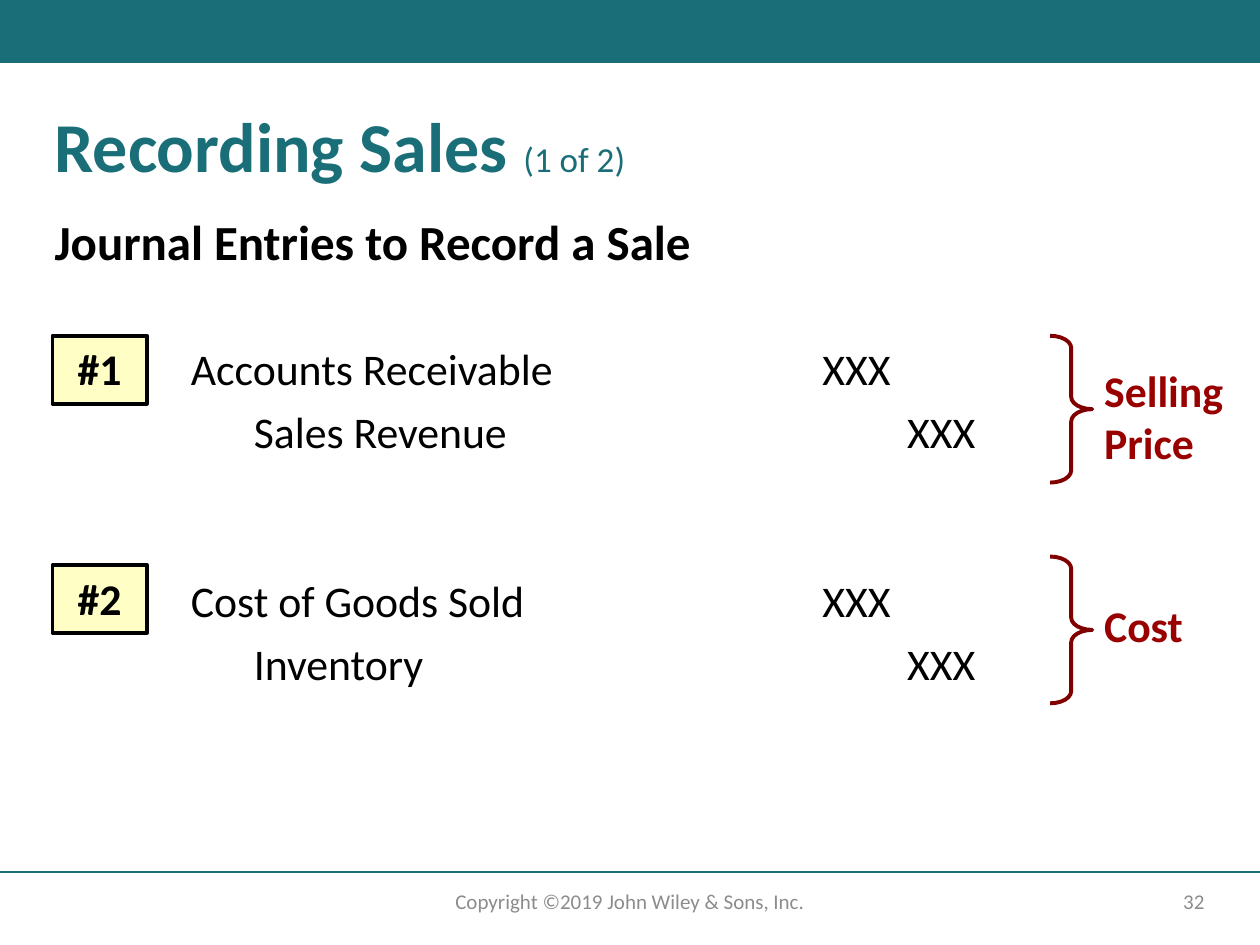
from pptx import Presentation, util as u
from pptx.dml.color import RGBColor
from pptx.enum import shapes, text
from pptx.oxml import parse_xml
from pptx.oxml.ns import nsdecls

TEAL, BLACK, GREY, RED = "196E78", "000000", "8C8C8C", "990000"
LEFT, CENTER, RIGHT = text.PP_ALIGN.LEFT, text.PP_ALIGN.CENTER, text.PP_ALIGN.RIGHT


def color(value):
    return RGBColor.from_string(value)


def put_text(sp, runs, align=LEFT, anchor=text.MSO_ANCHOR.TOP, spacing=1.0, indent=0.25, tab=None):
    tf = sp.text_frame
    frame = dict(word_wrap=True, vertical_anchor=anchor, margin_left=u.Cm(indent),
                 margin_right=u.Cm(0.25), margin_top=u.Cm(0.13), margin_bottom=u.Cm(0.13))
    for name, value in frame.items():
        setattr(tf, name, value)
    p = tf.paragraphs[0]
    p.alignment, p.line_spacing = align, spacing
    if tab:
        p._p.get_or_add_pPr().append(parse_xml(
            f'<a:tabLst {nsdecls("a")}><a:tab pos="{u.Cm(tab)}" algn="l"/></a:tabLst>'))
    for words, size, bold, fill in runs:
        r = p.add_run()
        r.text = words
        for name, value in dict(name="Calibri", size=u.Pt(size), bold=bold).items():
            setattr(r.font, name, value)
        r.font.color.rgb = color(fill)


prs = Presentation()
prs.slide_width, prs.slide_height = u.Cm(25.4), u.Cm(19.05)
s = prs.slides.add_slide(prs.slide_layouts[6])

# Top band and footer rule
sp = s.shapes.add_shape(shapes.MSO_SHAPE.RECTANGLE, 0, 0, prs.slide_width, u.Cm(1.27))
sp.shadow.inherit = False
sp.fill.solid()
sp.fill.fore_color.rgb = color(TEAL)
sp.line.fill.background()
rule = s.shapes.add_connector(shapes.MSO_CONNECTOR.STRAIGHT, 0, u.Cm(17.58), prs.slide_width, u.Cm(17.58))
rule.line.color.rgb = color(TEAL)
rule.line.width = u.Pt(1)
rule._element.spPr.append(parse_xml(f'<a:effectLst {nsdecls("a")}/>'))

# Title, subtitle and footer
middle = text.MSO_ANCHOR.MIDDLE
for box, runs, fmt in [
    ((0.85, 2.12, 23.7, 2.33), [("Recording Sales ", 40, True, TEAL), ("(1 of 2)", 20, False, TEAL)],
     dict(spacing=0.9)),
    ((0.85, 4.27, 23.7, 1.48), [("Journal Entries to Record a Sale", 28, True, BLACK)], dict(spacing=0.9)),
    ((17.93, 17.65, 6.6, 1.02), [("32", 12, False, GREY)], dict(align=RIGHT, anchor=middle)),
    ((8.4, 17.65, 8.6, 1.02), [("Copyright ©2019 John Wiley & Sons, Inc.", 12, False, GREY)],
     dict(align=CENTER, anchor=middle)),
]:
    put_text(s.shapes.add_textbox(*map(u.Cm, box)), runs, **fmt)

# Journal entries: number, tops of tag, lines, brace and label, then wording
for number, tag_y, line_y, brace_y, label_y, label_h, debit, credit, label in [
    ("#1", 6.77, 6.77, 6.77, 7.2, 2.39, "Accounts Receivable", "Sales Revenue", "Selling Price"),
    ("#2", 11.39, 11.43, 11.22, 11.95, 1.37, "Cost of Goods Sold", "Inventory", "Cost"),
]:
    # Debit line, then the indented credit line
    for i, (account, indent, amount_x) in enumerate([(debit, 0.25, 16.58), (credit, 1.52, 18.29)]):
        sp = s.shapes.add_textbox(u.Cm(3.6), u.Cm(line_y + 1.27 * i), u.Cm(17.57), u.Cm(1.37))
        put_text(sp, [(f"{account}\tXXX", 25, False, BLACK)], indent=indent, tab=amount_x - 3.6 - indent)

    # Number tag
    sp = s.shapes.add_shape(shapes.MSO_SHAPE.RECTANGLE, u.Cm(1.06), u.Cm(tag_y), u.Cm(1.9), u.Cm(1.37))
    sp.shadow.inherit = False
    sp.fill.solid()
    sp.fill.fore_color.rgb = color("FFFFC5")
    sp.line.color.rgb = color(BLACK)
    sp.line.width = u.Pt(2.25)
    put_text(sp, [(number, 25, True, BLACK)], align=CENTER)

    # Brace and its label
    sp = s.shapes.add_shape(shapes.MSO_SHAPE.RIGHT_BRACE, u.Cm(21.17), u.Cm(brace_y), u.Cm(0.85), u.Cm(2.96))
    sp.shadow.inherit = False
    sp.adjustments[0] = 0.29
    sp.fill.background()
    sp.line.color.rgb = color("800000")
    sp.line.width = u.Pt(2.25)
    sp = s.shapes.add_textbox(u.Cm(22.01), u.Cm(label_y), u.Cm(2.96), u.Cm(label_h))
    put_text(sp, [(label, 25, True, RED)])

prs.save("out.pptx")
